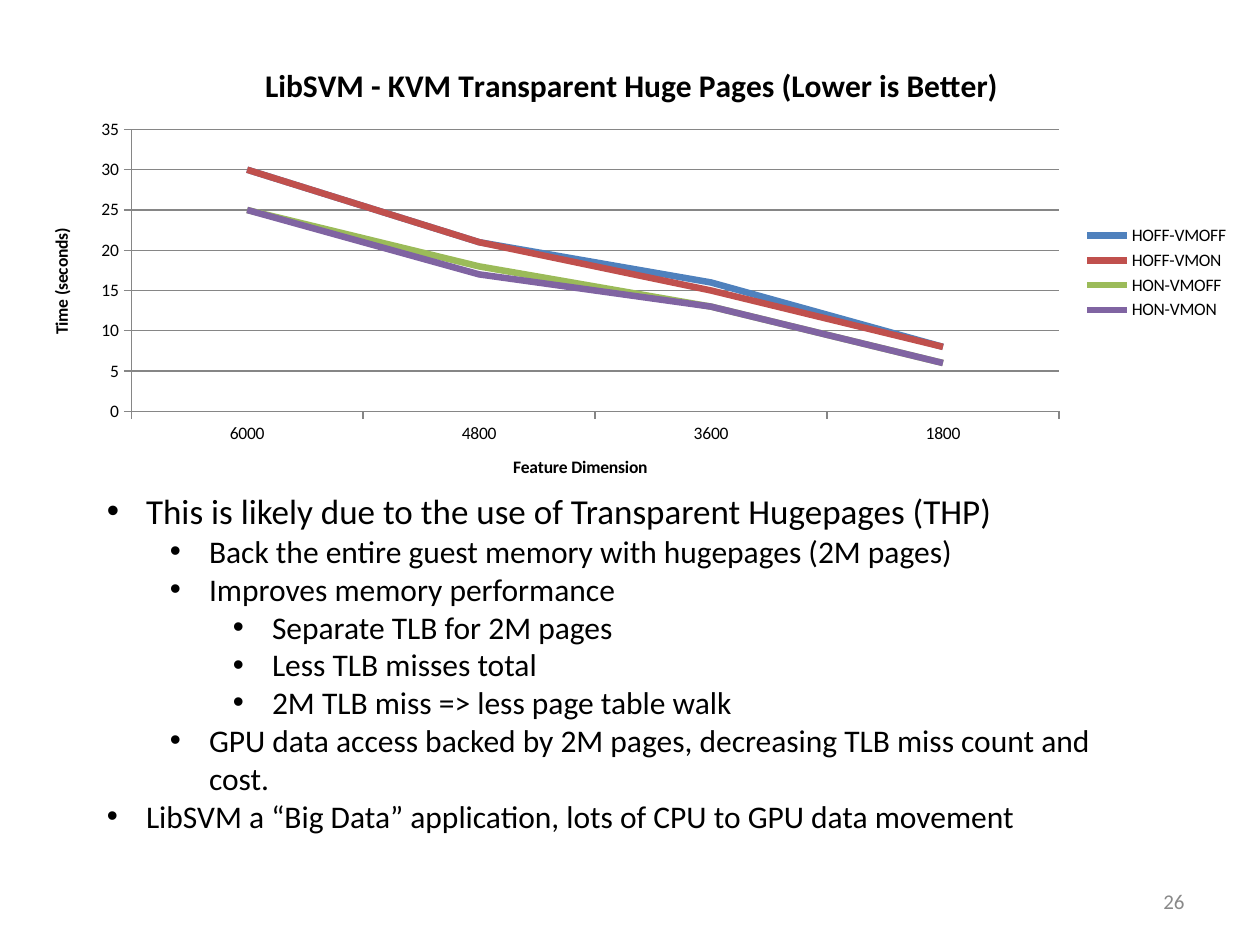
from typing import NamedTuple

from lxml import etree
from pptx import Presentation
from pptx import util as u
from pptx.chart import data as chart_data
from pptx.dml import color
from pptx.enum import chart as chart_enum, text
from pptx.oxml import ns

FONT = "Calibri"
BLACK = "000000"
AXIS_GREY = "868686"
NUMBER_GREY = "898989"
HANG = 0.79
LEVEL_STEP = 1.27


class Series(NamedTuple):
    name: str
    values: tuple
    colour: str


class Bullet(NamedTuple):
    level: int
    wording: str
    size: int = 18


CATEGORIES = ("6000", "4800", "3600", "1800")
SERIES = (
    Series("HOFF-VMOFF", (30, 21, 16, 8), "4F81BD"),
    Series("HOFF-VMON", (30, 21, 15, 8), "C0504D"),
    Series("HON-VMOFF", (25, 18, 13, 6), "9BBB59"),
    Series("HON-VMON", (25, 17, 13, 6), "8064A2"),
)
BULLETS = (
    Bullet(0, "This is likely due to the use of Transparent Hugepages (THP)", 20),
    Bullet(1, "Back the entire guest memory with hugepages (2M pages)"),
    Bullet(1, "Improves memory performance"),
    Bullet(2, "Separate TLB for 2M pages"),
    Bullet(2, "Less TLB misses total"),
    Bullet(2, "2M TLB miss => less page table walk"),
    Bullet(1, "GPU data access backed by 2M pages, decreasing TLB miss count and cost."),
    Bullet(0, "LibSVM a “Big Data” application, lots of CPU to GPU data movement"),
)


def rgb(value: str) -> color.RGBColor:
    return color.RGBColor.from_string(value)


def style_font(font, size: float, colour: str = BLACK, bold: bool = False) -> None:
    font.name = FONT
    font.size = u.Pt(size)
    font.bold = bold
    font.color.rgb = rgb(colour)


def write_title(owner, wording: str, size: float) -> None:
    frame = owner.text_frame
    frame.text = wording
    style_font(frame.paragraphs[0].runs[0].font, size, bold=True)


def place_plot(chart, x: float, y: float, w: float, h: float) -> None:
    plot_area = chart.element.chart.plotArea
    for old in plot_area.findall(ns.qn("c:layout")):
        plot_area.remove(old)
    layout = etree.Element(ns.qn("c:layout"))
    manual = etree.SubElement(layout, ns.qn("c:manualLayout"))
    settings = {"layoutTarget": "inner", "xMode": "edge", "yMode": "edge",
                "x": x, "y": y, "w": w, "h": h}
    for tag, value in settings.items():
        etree.SubElement(manual, ns.qn(f"c:{tag}")).set("val", str(value))
    plot_area.insert(0, layout)


def style_axis(axis, title: str) -> None:
    write_title(axis.axis_title, title, 10)
    axis.major_tick_mark = chart_enum.XL_TICK_MARK.OUTSIDE
    axis.minor_tick_mark = chart_enum.XL_TICK_MARK.NONE
    axis.format.line.color.rgb = rgb(AXIS_GREY)
    style_font(axis.tick_labels.font, 10)


def draw_chart(page) -> None:
    data = chart_data.CategoryChartData()
    data.categories = CATEGORIES
    for item in SERIES:
        data.add_series(item.name, item.values)
    chart = page.shapes.add_chart(
        chart_enum.XL_CHART_TYPE.LINE,
        u.Cm(0.43), u.Cm(0.84), u.Cm(24.61), u.Cm(9.32), data).chart
    style_font(chart.font, 10)
    chart.has_title = True
    write_title(chart.chart_title, "LibSVM - KVM Transparent Huge Pages (Lower is Better)", 18)
    chart.has_legend = True
    chart.legend.position = chart_enum.XL_LEGEND_POSITION.RIGHT
    chart.legend.include_in_layout = False
    style_font(chart.legend.font, 10)
    style_axis(chart.category_axis, "Feature Dimension")
    value_axis = chart.value_axis
    style_axis(value_axis, "Time (seconds)")
    value_axis.minimum_scale, value_axis.maximum_scale, value_axis.major_unit = 0, 35, 5
    value_axis.has_major_gridlines = True
    value_axis.major_gridlines.format.line.color.rgb = rgb(AXIS_GREY)
    plot = chart.plots[0]
    plot.vary_by_categories = False
    for line, item in zip(plot.series, SERIES):
        line.smooth = False
        line.format.line.width = u.Pt(3.75)
        line.format.line.color.rgb = rgb(item.colour)
    place_plot(chart, 0.09, 0.19, 0.76, 0.61)


def format_bullet(para, bullet: Bullet) -> None:
    para.level = bullet.level
    props = para._p.get_or_add_pPr()
    props.set("marL", str(u.Cm(HANG + LEVEL_STEP * bullet.level)))
    props.set("indent", str(-u.Cm(HANG)))
    etree.SubElement(props, ns.qn("a:buFont")).set("typeface", "Arial")
    etree.SubElement(props, ns.qn("a:buChar")).set("char", "•")
    para.space_before = u.Pt(0)
    style_font(para.runs[0].font, bullet.size)


def fill_body(body) -> None:
    body.left, body.top, body.width, body.height = u.Cm(1.9), u.Cm(9.75), u.Cm(20.96), u.Cm(8.03)
    frame = body.text_frame
    frame.word_wrap = True
    frame.auto_size = text.MSO_AUTO_SIZE.SHAPE_TO_FIT_TEXT
    frame.text = "\n".join(bullet.wording for bullet in BULLETS)
    for para, bullet in zip(frame.paragraphs, BULLETS):
        format_bullet(para, bullet)


def draw_page_number(page, number: str) -> None:
    box = page.shapes.add_textbox(u.Cm(18.21), u.Cm(17.65), u.Cm(5.92), u.Cm(1.02))
    frame = box.text_frame
    frame.word_wrap = True
    frame.vertical_anchor = text.MSO_ANCHOR.MIDDLE
    frame.text = number
    para = frame.paragraphs[0]
    para.alignment = text.PP_ALIGN.RIGHT
    style_font(para.runs[0].font, 12, NUMBER_GREY)


def main() -> None:
    deck = Presentation()
    deck.slide_width, deck.slide_height = u.Cm(25.4), u.Cm(19.05)
    page = deck.slides.add_slide(deck.slide_layouts[1])
    title = page.shapes.title.element
    title.getparent().remove(title)
    draw_page_number(page, "26")
    draw_chart(page)
    fill_body(page.placeholders[1])
    deck.save("out.pptx")


if __name__ == "__main__":
    main()
